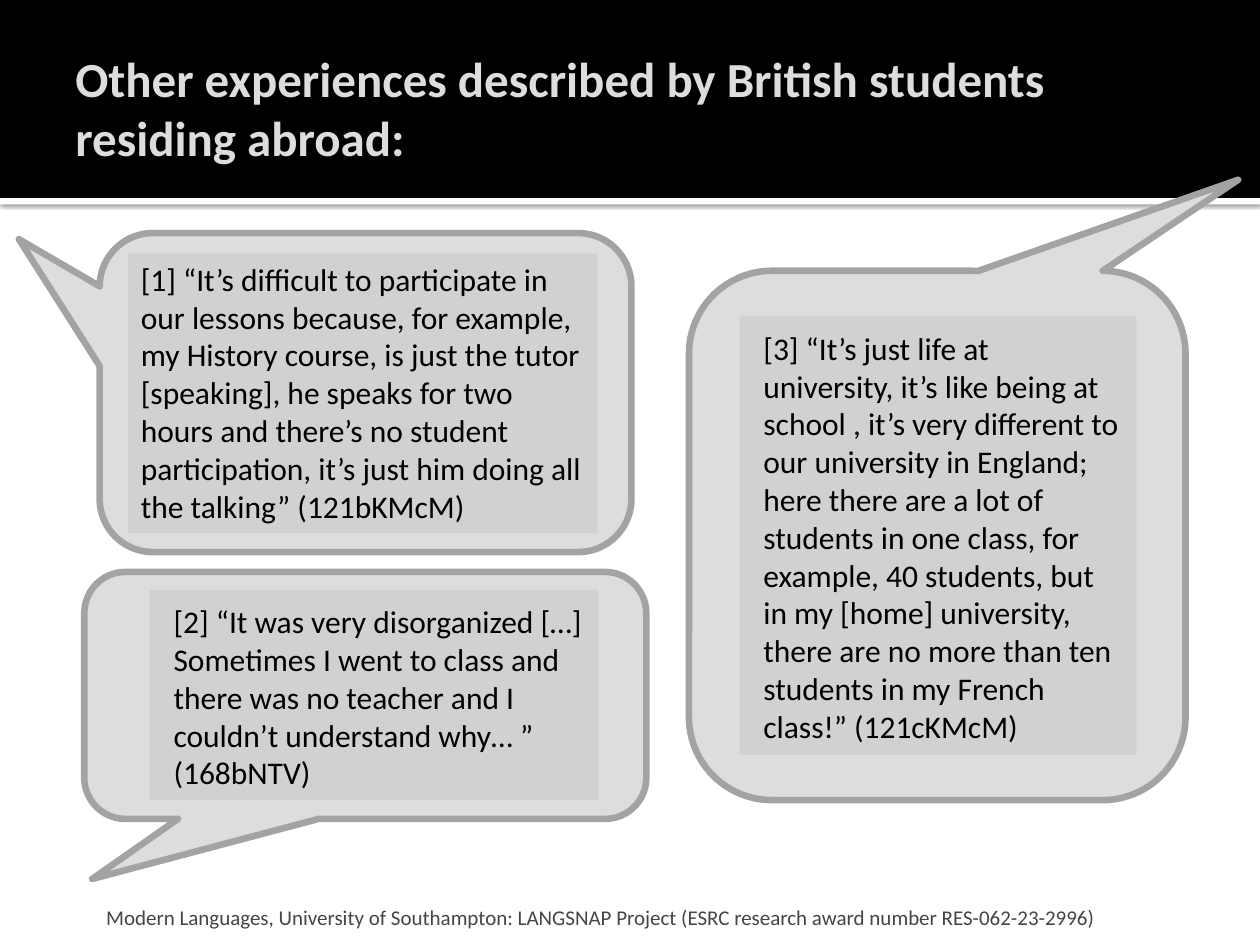
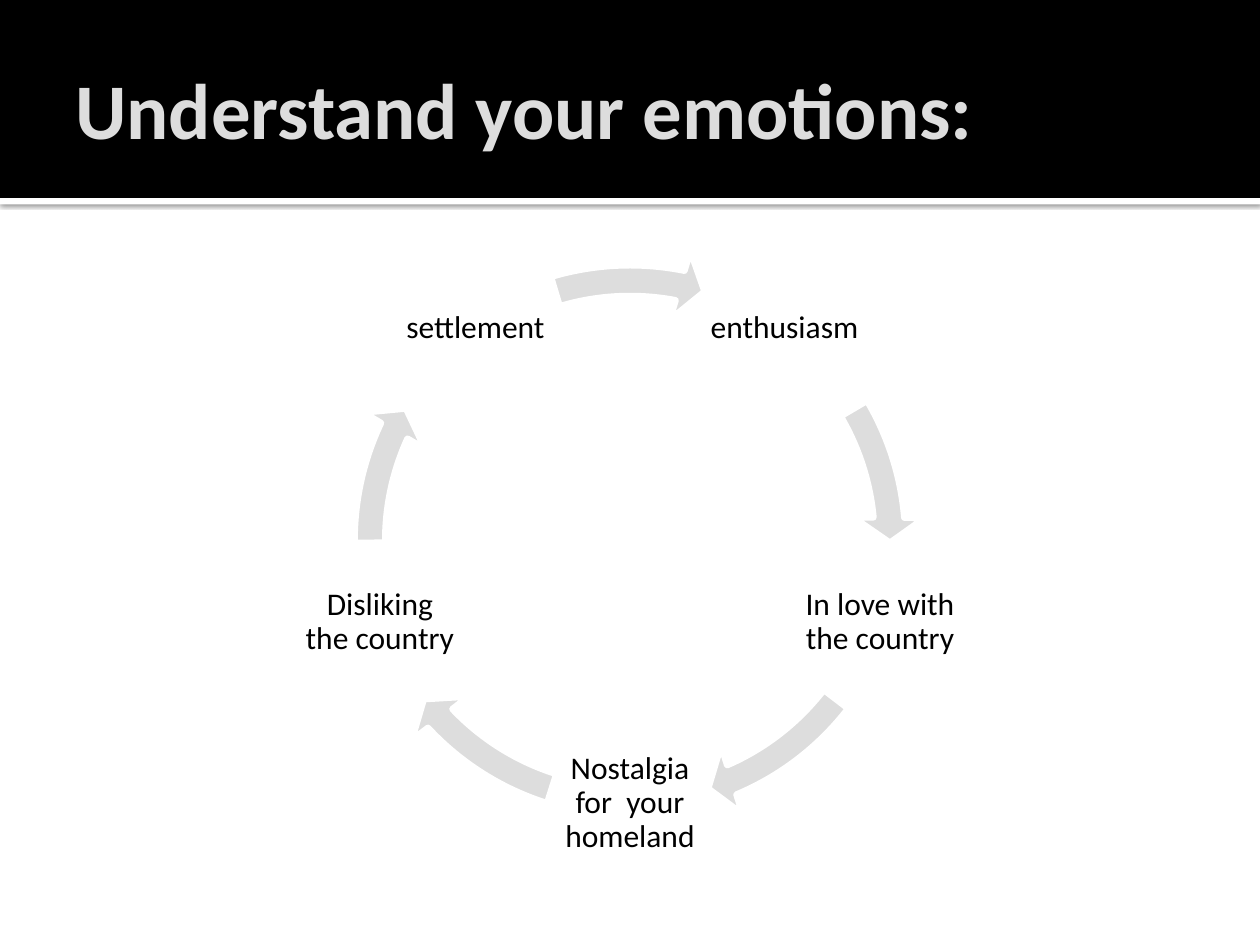
import math
import pptx
import pptx.util
import pptx.dml.color
import pptx.enum.shapes
import pptx.enum.text
import pptx.oxml
import pptx.oxml.ns

Cm, Pt = pptx.util.Cm, pptx.util.Pt
SHAPE = pptx.enum.shapes.MSO_SHAPE
ANCHOR = pptx.enum.text.MSO_ANCHOR
RGB = pptx.dml.color.RGBColor.from_string

COLOURS = {
    "band": "000000", "strip": "FFFFFF", "title": "DDDDDD", "text": "000000",
    "bubble": "DDDDDD", "outline": "A3A3A3", "quote": "D1D1D1",
    "arrow": "DDDDDD", "arrow_edge": "FFFFFF", "footer": "454545",
}
FONT = "Calibri"
LINE_WIDTH = Pt(3.78)
STRIP_SHADOW = (
    f'<a:effectLst {pptx.oxml.ns.nsdecls("a")}>'
    '<a:outerShdw blurRad="31750" dist="10160" dir="5400000" algn="tl" rotWithShape="0">'
    '<a:srgbClr val="000000"><a:alpha val="60000"/></a:srgbClr>'
    '</a:outerShdw></a:effectLst>'
)


def add_shape(shapes, kind, box, fill, line=None, adjustments=()):
    """Add a flat preset shape; box is left, top, width, height in cm."""
    sp = shapes.add_shape(kind, *map(Cm, box))
    sp.shadow.inherit = False
    sp.fill.solid()
    sp.fill.fore_color.rgb = RGB(COLOURS[fill])
    if line:
        sp.line.color.rgb = RGB(COLOURS[line])
        sp.line.width = LINE_WIDTH
    else:
        sp.line.fill.background()
    for i, value in enumerate(adjustments):
        sp.adjustments[i] = value
    return sp


def add_text(shapes, text, box, size, colour, insets, anchor=ANCHOR.TOP, bold=False):
    """Add a wrapped text box; insets are left, top, right, bottom in cm."""
    sp = shapes.add_textbox(*map(Cm, box))
    tf = sp.text_frame
    tf.word_wrap = True
    tf.vertical_anchor = anchor
    tf.margin_left, tf.margin_top, tf.margin_right, tf.margin_bottom = map(Cm, insets)
    tf.text = text
    font = tf.paragraphs[0].runs[0].font
    font.name, font.size, font.bold = FONT, Pt(size), bold
    font.color.rgb = RGB(COLOURS[colour])
    return sp


prs = pptx.Presentation()
prs.slide_width, prs.slide_height = Cm(25.4), Cm(19.05)

# Both slides: strip, band and title
slides = []
for title, size in [
    ("Other experiences described by British students residing abroad:", 28),
    ("Understand your emotions:", 45),
]:
    s = prs.slides.add_slide(prs.slide_layouts[6])
    strip = add_shape(s.shapes, SHAPE.RECTANGLE, (0, 3.99, 25.4, 0.13), "strip")
    strip.shadow.inherit = True
    strip._element.spPr.append(pptx.oxml.parse_xml(STRIP_SHADOW))
    add_shape(s.shapes, SHAPE.RECTANGLE, (0, 0, 25.4, 3.99), "band")
    add_text(s.shapes, title, (1.27, 0.43, 22.86, 3.48), size, "title",
             (0.25, 0.13, 0.13, 0.13), ANCHOR.MIDDLE, bold=True)
    slides.append(s)
quotes_slide, cycle_slide = slides

# Slide 1: speech bubbles, each with its tail offset, and the quotes in them
plain_insets = (0.25, 0.13, 0.25, 0.13)
indented_insets = (0.48, 0.25, 0.25, 0.13)
quotes = [
    ((1.7, 11.53, 11.33, 4.98), (-0.486, 0.743),
     (3.02, 11.89, 9.04, 4.24), indented_insets,
     "[2] “It was very disorganized […] Sometimes I went to class and there was no "
     "teacher and I couldn’t understand why… ” (168bNTV)"),
    ((13.89, 5.46, 10.01, 10.67), (0.606, -0.672),
     (14.91, 6.38, 8, 8.84), indented_insets,
     "[3] “It’s just life at university, it’s like being at school , it’s very different "
     "to our university in England; here there are a lot of students in one class, for "
     "example, 40 students, but in my [home] university, there are no more than ten "
     "students in my French class!” (121cKMcM)"),
    ((2.01, 4.7, 10.72, 6.43), (-0.652, -0.481),
     (2.59, 5.11, 9.45, 5.64), plain_insets,
     "[1] “It’s difficult to participate in our lessons because, for example, my History "
     "course, is just the tutor [speaking], he speaks for two hours and there’s no student "
     "participation, it’s just him doing all the talking” (121bKMcM)"),
]
for bubble, tail, box, insets, quote in quotes:
    add_shape(quotes_slide.shapes, SHAPE.ROUNDED_RECTANGULAR_CALLOUT, bubble,
              "bubble", "outline", (*tail, 0.167))
    sp = add_text(quotes_slide.shapes, quote, box, 18, "text", insets)
    sp.fill.solid()
    sp.fill.fore_color.rgb = RGB(COLOURS["quote"])

add_text(quotes_slide.shapes,
         "Modern Languages, University of Southampton: LANGSNAP Project "
         "(ESRC research award number RES-062-23-2996)",
         (2.01, 17.93, 21.36, 0.81), 12, "footer", (0.13, 0.13, 0.13, 0), ANCHOR.BOTTOM)

# Slide 2: five stages at equal angles on a circle, with an arrow after each
CENTRE_X, CENTRE_Y, RADIUS = 12.7, 10.9, 5.3
STAGE, RING = 3.18, 11.94
ANGLE_UNIT = 0.6  # one degree as an adjustment value
stages = [  # label, start and end of the arrow in degrees
    ("enthusiasm", 329.44, 354.89),
    ("In love with the country", 37.56, 66.91),
    ("Nostalgia for  your homeland", 107.49, 136.85),
    ("Disliking the country", 179.51, 204.97),
    ("settlement", 253.31, 281.1),
]
ring_box = (CENTRE_X - RING / 2, CENTRE_Y - RING / 2, RING, RING)
cycle = cycle_slide.shapes.add_group_shape()
for i, (label, start, end) in enumerate(stages):
    angle = math.radians(-54 + i * 360 / len(stages))
    left = CENTRE_X + RADIUS * math.cos(angle) - STAGE / 2
    top = CENTRE_Y + RADIUS * math.sin(angle) - STAGE / 2
    sp = add_text(cycle.shapes, label, (left, top, STAGE, STAGE), 18, "text",
                  (0.08,) * 4, ANCHOR.MIDDLE)
    p = sp.text_frame.paragraphs[0]
    p.alignment = pptx.enum.text.PP_ALIGN.CENTER
    p.line_spacing = 0.9
    add_shape(cycle.shapes, SHAPE.CIRCULAR_ARROW, ring_box, "arrow", "arrow_edge",
              (0.052, 5.6 * ANGLE_UNIT, end * ANGLE_UNIT, start * ANGLE_UNIT, 0.061))

prs.save("out.pptx")
